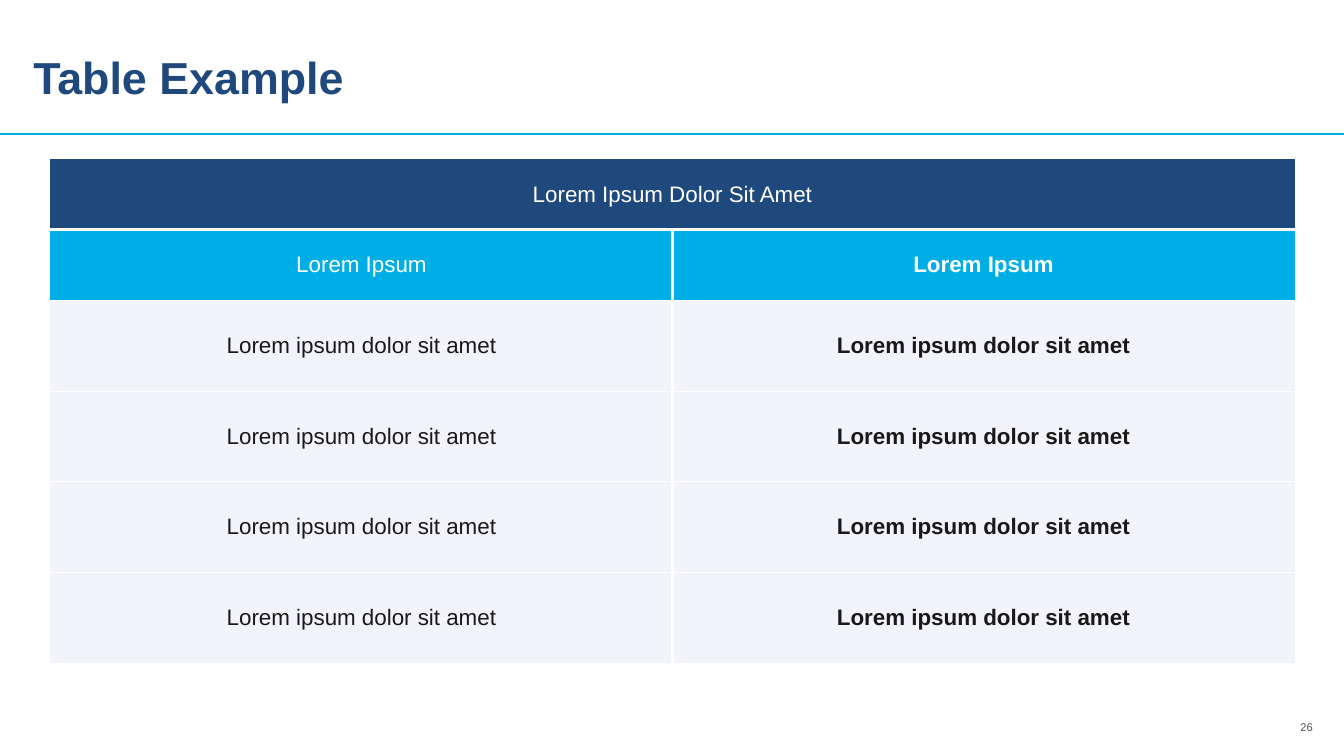
from dataclasses import dataclass

from lxml import etree
from pptx import Presentation
from pptx import util as u
from pptx.dml.color import RGBColor
from pptx.enum import shapes, text
from pptx.oxml import ns

FONT = "Arial"
COLORS = {
    "navy": "1F497D",
    "cyan": "00AEE6",
    "pale": "F3F4FB",
    "white": "FFFFFF",
    "ink": "191919",
    "grey": "525252",
}
SLIDE_W, SLIDE_H = 13.33, 7.5
RULE_Y = 1.33
COLUMN_W = 6.17


@dataclass(frozen=True)
class TableRow:
    texts: tuple[str, ...]
    height: float
    fill: str
    color: str
    top_line: float = 1
    bottom_line: float = 1


ROWS = [
    TableRow(("Lorem Ipsum Dolor Sit Amet",), 0.7, "navy", "white", 0, 2.25),
    TableRow(("Lorem Ipsum",) * 2, 0.7, "cyan", "white", 2.25),
    *[TableRow(("Lorem ipsum dolor sit amet",) * 2, 0.9, "pale", "ink")] * 3,
    TableRow(("Lorem ipsum dolor sit amet",) * 2, 0.9, "pale", "ink", 1, 0),
]


def rgb(name: str) -> RGBColor:
    return RGBColor.from_string(COLORS[name])


def add_run(p, content: str, size: float, color: str, bold: bool = False) -> None:
    r = p.add_run()
    r.text = content
    r.font.name = FONT
    r.font.size = u.Pt(size)
    r.font.bold = bold
    r.font.color.rgb = rgb(color)


def set_borders(cell, left: float, right: float, top: float, bottom: float) -> None:
    """Draw white cell edges, widths in points; zero means no line."""
    tc_pr = cell._tc.get_or_add_tcPr()
    for side, width in zip("LRTB", (left, right, top, bottom)):
        ln = etree.SubElement(tc_pr, ns.qn(f"a:ln{side}"), w=str(u.Pt(width)))
        if width:
            fill = etree.SubElement(ln, ns.qn("a:solidFill"))
            etree.SubElement(fill, ns.qn("a:srgbClr"), val=COLORS["white"])
        else:
            etree.SubElement(ln, ns.qn("a:noFill"))


def add_title(s, content: str) -> None:
    title = s.shapes.title
    title.left, title.top = u.Inches(0.33), u.Inches(0.26)
    title.width, title.height = u.Inches(12.16), u.Inches(1)
    tf = title.text_frame
    tf.auto_size = text.MSO_AUTO_SIZE.NONE
    tf.margin_left = tf.margin_right = 0
    tf.vertical_anchor = text.MSO_ANCHOR.MIDDLE
    p = tf.paragraphs[0]
    p.alignment = text.PP_ALIGN.LEFT
    add_run(p, content, 32, "navy", bold=True)


def add_rule(s) -> None:
    rule = s.shapes.add_connector(
        shapes.MSO_CONNECTOR.STRAIGHT,
        0, u.Inches(RULE_Y), u.Inches(SLIDE_W), u.Inches(RULE_Y),
    )
    rule.line.color.rgb = rgb("cyan")
    rule.line.width = u.Pt(1)
    etree.SubElement(rule._element.spPr, ns.qn("a:effectLst"))


def add_page_number(s, number: str) -> None:
    box = s.shapes.add_textbox(
        u.Inches(12.75), u.Inches(7.07), u.Inches(0.42), u.Inches(0.28)
    )
    tf = box.text_frame
    tf.word_wrap = True
    tf.vertical_anchor = text.MSO_ANCHOR.MIDDLE
    p = tf.paragraphs[0]
    p.alignment = text.PP_ALIGN.CENTER
    add_run(p, number, 8, "grey")


def add_table(s, rows: list[TableRow]) -> None:
    """Build the two-column table; a row with one text spans both columns."""
    frame = s.shapes.add_table(
        len(rows), 2, u.Inches(0.5), u.Inches(1.58), u.Inches(2 * COLUMN_W),
        u.Inches(sum(row.height for row in rows)),
    )
    table = frame.table
    table.first_row = table.horz_banding = False
    for column in table.columns:
        column.width = u.Inches(COLUMN_W)
    for i, row in enumerate(rows):
        table.rows[i].height = u.Inches(row.height)
        spans = len(row.texts) == 1
        if spans:
            table.cell(i, 0).merge(table.cell(i, 1))
        divider = 0 if spans else 3
        for j in range(2):
            cell = table.cell(i, j)
            set_borders(cell, divider * j, divider * (1 - j),
                        row.top_line, row.bottom_line)
            cell.fill.solid()
            cell.fill.fore_color.rgb = rgb(row.fill)
            if j < len(row.texts):
                cell.vertical_anchor = text.MSO_ANCHOR.MIDDLE
                p = cell.text_frame.paragraphs[0]
                p.alignment = text.PP_ALIGN.CENTER
                add_run(p, row.texts[j], 16, row.color, bold=j == 1)


def main() -> None:
    prs = Presentation()
    prs.slide_width, prs.slide_height = u.Inches(SLIDE_W), u.Inches(SLIDE_H)
    s = prs.slides.add_slide(prs.slide_layouts[5])
    add_rule(s)
    add_title(s, "Table Example")
    add_page_number(s, "26")
    add_table(s, ROWS)
    prs.save("out.pptx")


if __name__ == "__main__":
    main()
